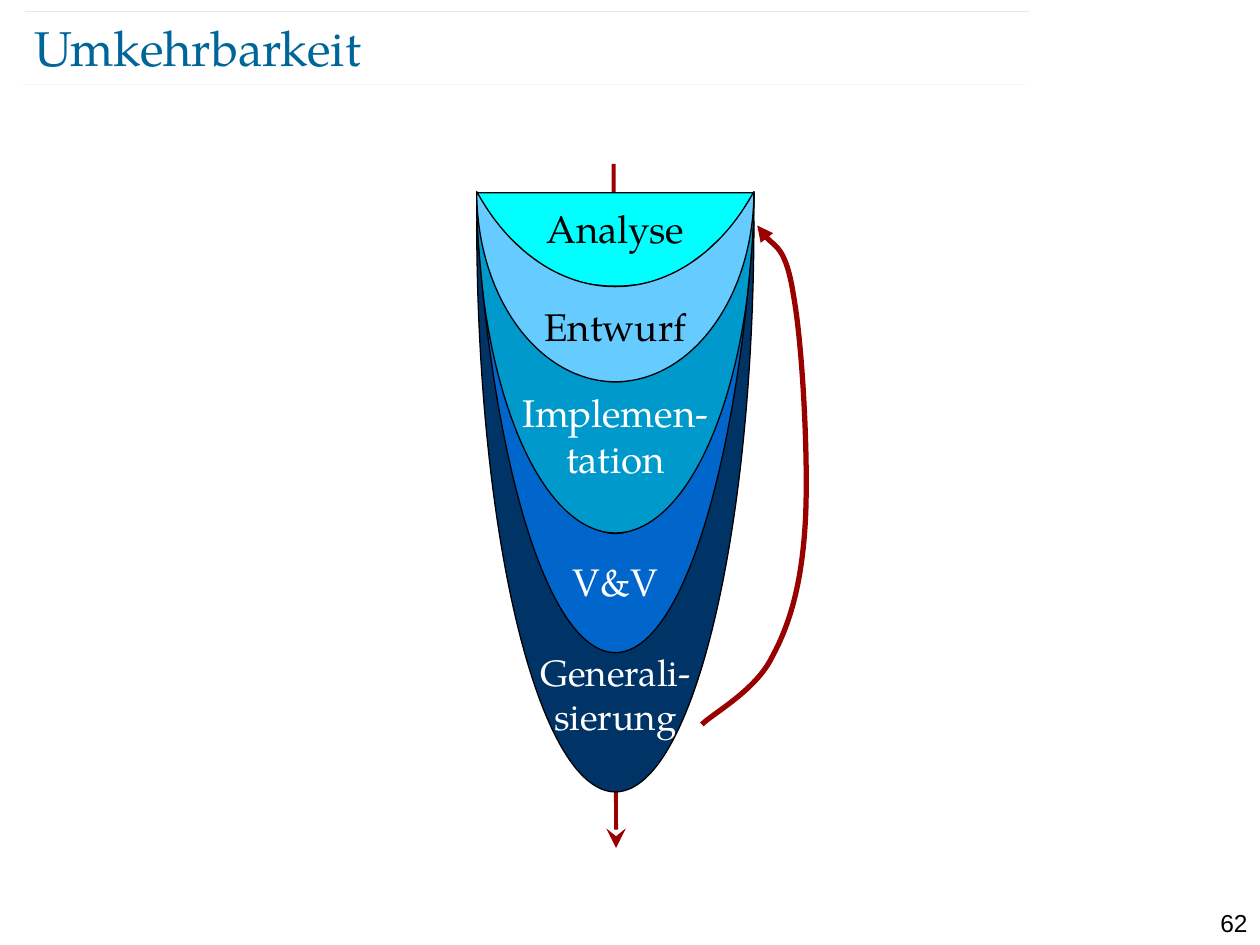
from dataclasses import dataclass

from lxml.etree import SubElement
from pptx import Presentation
from pptx.dml.color import RGBColor
from pptx.enum.shapes import MSO_CONNECTOR as Connector, MSO_SHAPE as Shape
from pptx.enum.text import MSO_ANCHOR as Anchor, PP_ALIGN as Align
from pptx.oxml.ns import qn
from pptx.util import Inches, Pt

COLUMNS, ROWS = 100, 75
WIDTH, HEIGHT = Inches(10), Inches(7.5)
COLORS = {
    "title": "006699", "arrow": "990000", "black": "000000", "white": "FFFFFF",
    "analysis": "00FFFF", "design": "66CCFF", "coding": "0099CC",
    "checking": "0066CC", "general": "003366",
}
SERIF, SANS = "TeX Gyre Pagella", "Arial"
AXIS, TOP, SPAN = 48.84, 15.3, 22


@dataclass(frozen=True)
class Crescent:
    top: float
    depth: float
    thickness: float
    color: str


@dataclass(frozen=True)
class Label:
    text: str
    top: float
    width: float
    height: float
    color: str
    size: float = 22


BACK_CRESCENTS = [Crescent(15.4, 38.6, 0.302, "checking")]
FRONT_CRESCENTS = [
    Crescent(15.3, 27, 0.444, "coding"),
    Crescent(15.2, 15.1, 0.5, "design"),
    Crescent(17.55, 45.3, 0.244, "general"),
]
LABELS = [
    Label("Analyse", 15.8, 17.7, 4.7, "black"),
    Label("Entwurf", 23.6, 17.7, 4.7, "black"),
    Label("Implemen-\ntation", 30.4, 17.8, 8.3, "white"),
    Label("V&V", 43.8, 9.3, 4.7, "white"),
    Label("Generali-\nsierung", 51.1, 16, 8, "white", 21),
]
# Right half of the bowl: distance from the axis, depth below the top edge
BOWL = [(11, 0), (10, 1.6), (9.4, 2.5), (8.6, 3.4), (7.8, 4.1), (7.2, 4.7), (6.5, 5.2),
        (5.7, 5.8), (4.8, 6.3), (3.9, 6.7), (2.8, 7.1), (1.8, 7.3), (0.7, 7.4)]
# Start point, then three points for each Bézier segment
RETURN_PATH = [
    (55.7, 57.5),
    (56.6, 56.6), (60, 54.8), (61.3, 52.1),
    (62.7, 49.5), (63.6, 46.4), (63.9, 41.7),
    (64.2, 36.9), (63.7, 27.5), (63, 23.6),
    (62.4, 19.6), (60.7, 19.1), (60.1, 17.9),
]


def x(columns: float) -> int:
    return round(WIDTH * columns / COLUMNS)


def y(rows: float) -> int:
    return round(HEIGHT * rows / ROWS)


def rgb(name: str) -> RGBColor:
    return RGBColor.from_string(COLORS[name])


def outline(shape, color: str, points: float) -> None:
    shape.line.color.rgb = rgb(color)
    shape.line.width = Pt(points)


def paint(shape, color: str) -> None:
    shape.shadow.inherit = False
    shape.fill.solid()
    shape.fill.fore_color.rgb = rgb(color)
    outline(shape, "black", 0.75)


def add_arrowhead(shape, kind: str, size: str = "med") -> None:
    SubElement(shape.line._get_or_add_ln(), qn("a:tailEnd"), type=kind, w=size, len=size)


def add_line(slide, start: tuple, end: tuple, color: str, points: float):
    line = slide.shapes.add_connector(
        Connector.STRAIGHT, x(start[0]), y(start[1]), x(end[0]), y(end[1]))
    outline(line, color, points)
    SubElement(line._element.spPr, qn("a:effectLst"))
    return line


def add_crescent(slide, crescent: Crescent) -> None:
    """Hang a moon, turned to open upwards, from its top row."""
    middle = crescent.top + crescent.depth / 2
    moon = slide.shapes.add_shape(
        Shape.MOON, x(AXIS - crescent.depth / 2), y(middle - SPAN / 2),
        x(crescent.depth), y(SPAN))
    moon.rotation = 270
    moon.adjustments[0] = crescent.thickness
    paint(moon, crescent.color)


def add_outline(slide, points: list, close: bool):
    start, *others = [(x(column), y(row)) for column, row in points]
    builder = slide.shapes.build_freeform(*start)
    builder.add_line_segments(others, close=close)
    return builder.convert_to_shape()


def add_return_arrow(slide) -> None:
    arrow = add_outline(slide, RETURN_PATH, close=False)
    path = arrow._element.spPr.find(".//" + qn("a:path"))
    corners = path.findall(qn("a:lnTo"))
    for first in range(0, len(corners), 3):
        curve = SubElement(path, qn("a:cubicBezTo"))
        for corner in corners[first:first + 3]:
            curve.append(corner[0])
            path.remove(corner)
    arrow.shadow.inherit = False
    arrow.fill.background()
    outline(arrow, "arrow", 3)
    add_arrowhead(arrow, "triangle")


def write(box, text: str, align: Align, color: str, **font: object) -> None:
    para = box.text_frame.paragraphs[0]
    para.text = text
    para.alignment = align
    for span in para.runs:
        for name, value in font.items():
            setattr(span.font, name, value)
        span.font.color.rgb = rgb(color)


def add_text(slide, left: float, top: float, width: float, height: float):
    box = slide.shapes.add_textbox(x(left), y(top), x(width), y(height))
    box.text_frame.word_wrap = True
    return box


def add_label(slide, label: Label) -> None:
    box = add_text(slide, AXIS - label.width / 2, label.top, label.width, label.height)
    write(box, label.text, Align.CENTER, label.color, name=SERIF, size=Pt(label.size))


def add_title(slide) -> None:
    title = slide.shapes.title
    place = {"left": x(2.7), "top": y(1.3), "width": x(86.9), "height": y(4.8)}
    for name, value in place.items():
        setattr(title, name, value)
    layout = {"margin_left": 0, "margin_top": 0, "margin_right": 0, "margin_bottom": 0,
              "vertical_anchor": Anchor.MIDDLE, "word_wrap": True}
    for name, value in layout.items():
        setattr(title.text_frame, name, value)
    write(title, "Umkehrbarkeit", Align.LEFT, "title", name=SERIF, size=Pt(28))


def add_frame(slide) -> None:
    for left, row in [(1.8, 6.7), (2, 0.9)]:
        rule = add_line(slide, (left, row), (left + 79.7, row), "title", 0.1)
        color = rule.line._get_or_add_ln().find(".//" + qn("a:srgbClr"))
        SubElement(color, qn("a:alpha"), val="35000")
    number = add_text(slide, 94.5, 71.6, 5.5, 2.4)
    write(number, "62", Align.RIGHT, "black", name=SANS, size=Pt(14))


def main() -> None:
    deck = Presentation()
    deck.slide_width, deck.slide_height = WIDTH, HEIGHT
    slide = deck.slides.add_slide(deck.slide_layouts[5])
    add_title(slide)
    add_frame(slide)
    flow = add_line(slide, (48.7, 13), (48.9, 67.3), "arrow", 2.25)
    add_arrowhead(flow, "stealth", "lg")
    for crescent in BACK_CRESCENTS:
        add_crescent(slide, crescent)
    right = [(AXIS + offset, TOP + depth) for offset, depth in BOWL]
    left = [(AXIS - offset, TOP + depth) for offset, depth in reversed(BOWL)]
    paint(add_outline(slide, right + left, close=True), "analysis")
    for crescent in FRONT_CRESCENTS:
        add_crescent(slide, crescent)
    for label in LABELS:
        add_label(slide, label)
    add_return_arrow(slide)
    deck.save("out.pptx")


if __name__ == "__main__":
    main()
